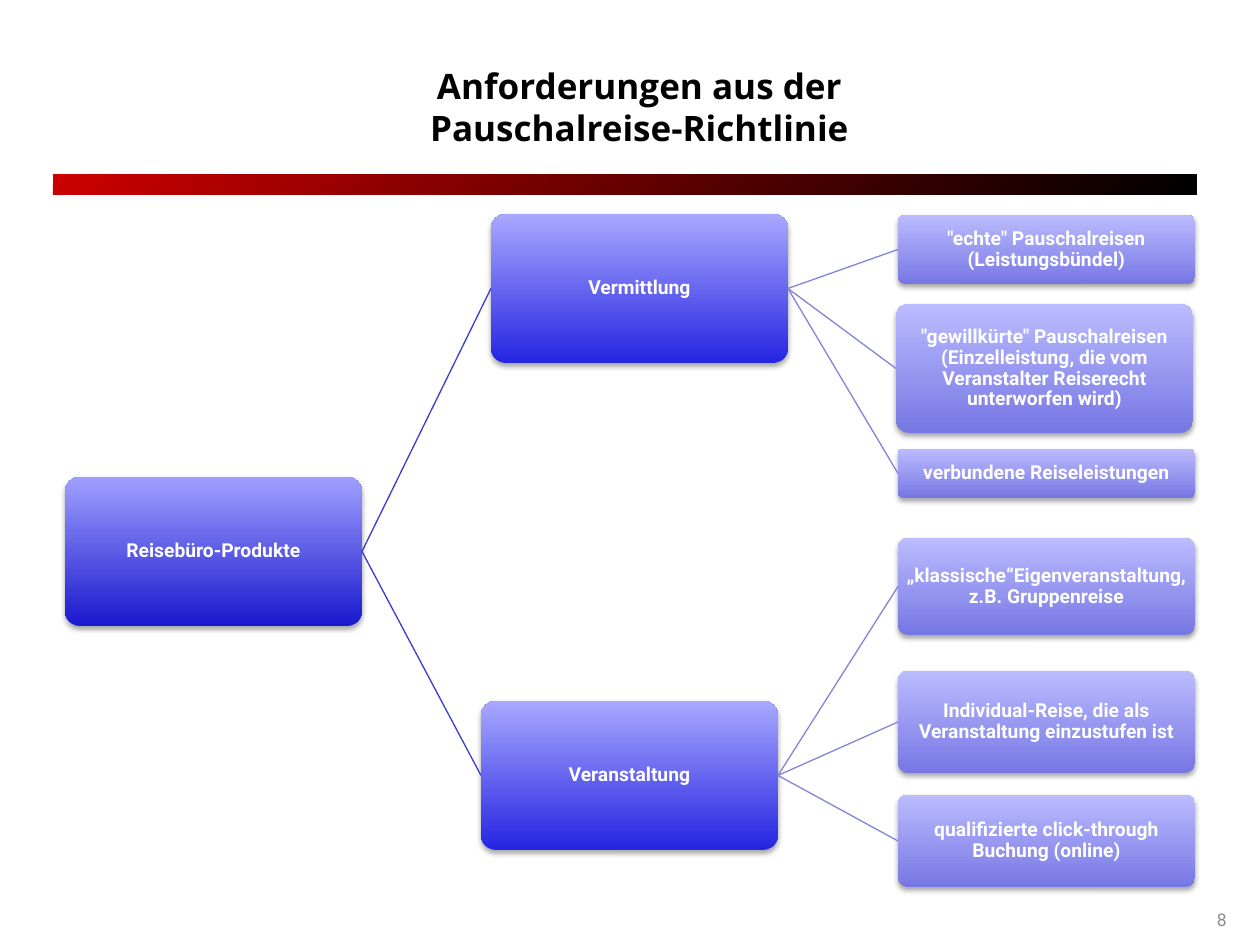
"""Build a slide with a left-to-right tree of travel agency products."""
from lxml import etree
from pptx import Presentation
from pptx import util as u
from pptx.dml.color import RGBColor
from pptx.enum import shapes, text
from pptx.oxml.ns import qn

PX = 914400 // 126
HEX = {"red": "CC0000", "black": "000000", "white": "FFFFFF", "grey": "8C8C8C"}
TITLE = "Anforderungen aus der Pauschalreise-Richtlinie"
WIDE, TALL = 297, 149
LEVELS = [
    {"low": "1919CE", "high": "9F9FFF"},
    {"low": "2525E2", "high": "A8A8FF", "line": "3B3BCD"},
    {"low": "7777E4", "high": "BBBBFF", "line": "8484D7"},
]
TREE = ("Reisebüro-Produkte", 65, 477, TALL, [
    ("Vermittlung", 491, 214, TALL, [
        ('"echte" Pauschalreisen (Leistungsbündel)', 898, 215, 69, []),
        ('"gewillkürte" Pauschalreisen (Einzelleistung, die vom '
         'Veranstalter Reiserecht unterworfen wird)', 896, 304, 129, []),
        ("verbundene Reiseleistungen", 898, 449, 49, []),
    ]),
    ("Veranstaltung", 481, 701, TALL, [
        ("„klassische“Eigenveranstaltung, z.B. Gruppenreise", 898, 538, 97, []),
        ("Individual-Reise, die als Veranstaltung einzustufen ist", 898, 671, 102, []),
        ("qualifizierte click-through Buchung (online)", 898, 795, 92, []),
    ]),
])


def px(*nums):
    return [round(n * PX) for n in nums]


def rgb(code):
    return RGBColor.from_string(code)


def blend(shape, start, end, angle):
    shape.shadow.inherit = False
    shape.line.fill.background()
    shape.fill.gradient()
    shape.fill.gradient_angle = angle
    for stop, code in zip(shape.fill.gradient_stops, (start, end)):
        stop.color.rgb = rgb(code)


def write(shape, words, align, color, space=None, inset=None, **font):
    frame = shape.text_frame
    form = {"word_wrap": True, "auto_size": text.MSO_AUTO_SIZE.NONE,
            "vertical_anchor": text.MSO_ANCHOR.MIDDLE}
    if inset is not None:
        form |= {f"margin_{side}": inset for side in ("left", "right", "top", "bottom")}
    for key, val in form.items():
        setattr(frame, key, val)
    frame.text = words
    para = frame.paragraphs[0]
    para.alignment = align
    para.line_spacing = space
    face = para.runs[0].font
    for key, val in font.items():
        setattr(face, key, val)
    face.color.rgb = rgb(HEX[color])


def shade(shape):
    effects = shape._element.spPr.find(qn("a:effectLst"))
    outer = etree.SubElement(effects, qn("a:outerShdw"), blurRad=str(u.Pt(3.1)),
                             dist=str(u.Pt(1.8)), dir="5400000", rotWithShape="0")
    tint = etree.SubElement(outer, qn("a:srgbClr"), val=HEX["black"])
    etree.SubElement(tint, qn("a:alpha"), val="35000")


def link(slide, start, end, color):
    line = slide.shapes.add_connector(shapes.MSO_CONNECTOR.STRAIGHT, 0, 0, 0, 0)
    line.begin_connect(start, 3)
    line.end_connect(end, 1)
    line.line.color.rgb = rgb(color)
    line.line.width = u.Pt(0.75)
    etree.SubElement(line._element.spPr, qn("a:effectLst"))


def grow(slide, node, depth=0, parent=None):
    words, left, top, high, kids = node
    look = LEVELS[depth]
    box = slide.shapes.add_shape(shapes.MSO_SHAPE.ROUNDED_RECTANGLE,
                                 *px(left, top, WIDE, high))
    box.adjustments[0] = 0.1
    blend(box, look["low"], look["high"], 90)
    shade(box)
    write(box, words, text.PP_ALIGN.CENTER, "white", 0.9, PX,
          name="Roboto", size=u.Pt(11), bold=True)
    if parent is not None:
        link(slide, parent, box, look["line"])
    for kid in kids:
        grow(slide, kid, depth + 1, box)


def main():
    deck = Presentation()
    deck.slide_width, deck.slide_height = px(1260, 945)
    slide = deck.slides.add_slide(deck.slide_layouts[5])
    title = slide.shapes.title
    title.left, title.top, title.width, title.height = px(382, 48, 515, 116)
    write(title, TITLE, text.PP_ALIGN.CENTER, "black",
          name="Open Sans", size=u.Pt(20), bold=True)
    bar = slide.shapes.add_shape(shapes.MSO_SHAPE.RECTANGLE, *px(53, 174, 1144, 21))
    blend(bar, HEX["red"], HEX["black"], 315)
    grow(slide, TREE)
    page = slide.shapes.add_textbox(*px(945, 895, 294, 50))
    write(page, "8", text.PP_ALIGN.RIGHT, "grey", name="Roboto", size=u.Pt(10))
    deck.save("out.pptx")


if __name__ == "__main__":
    main()
